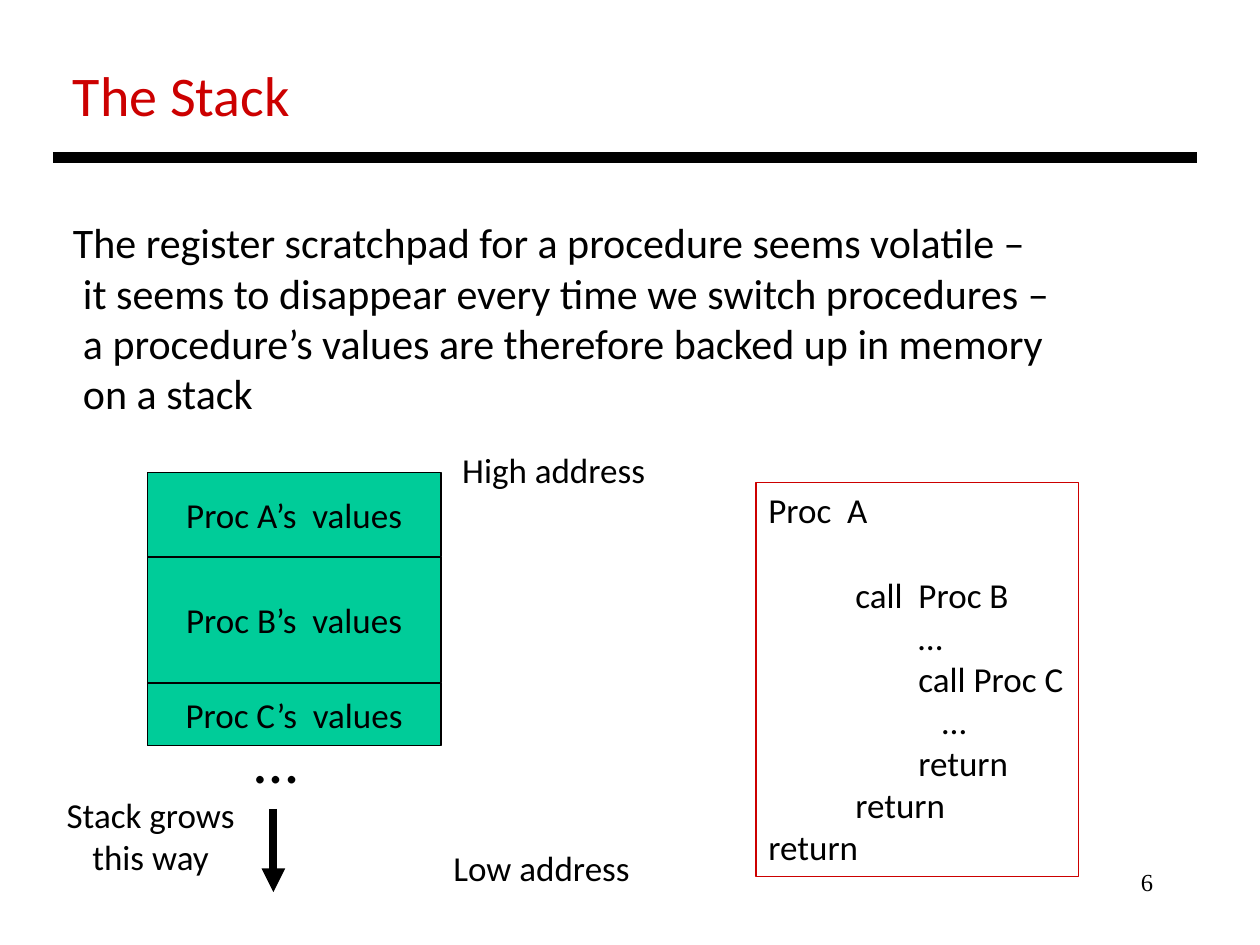
from lxml import etree
from pptx import Presentation
from pptx.dml.color import RGBColor
from pptx.enum import shapes, text
from pptx.oxml import ns
from pptx.util import Inches, Pt

BLACK, RED, GREEN = "000000", "CC0000", "00CC99"
LEFT, CENTER, RIGHT = text.PP_ALIGN.LEFT, text.PP_ALIGN.CENTER, text.PP_ALIGN.RIGHT

# Each line of text: (words, indent in inches, space before in points)
INTRO = [
    ("The register scratchpad for a procedure seems volatile –", 0.15, 0),
    ("it seems to disappear every time we switch procedures –", 0.23, 0),
    ("a procedure’s values are therefore backed up in memory", 0.23, 0),
    ("on a stack", 0.23, 0),
]
CODE = [
    ("Proc  A", 0, 0),
    ("call  Proc B", 0.69, 24.4),
    ("…", 1.19, 0),
    ("call Proc C", 1.19, 0),
    ("…", 1.38, 0),
    ("return", 1.19, 0),
    ("return", 0.69, 0),
    ("return", 0, 0),
]
# Stack frames from high to low address: (label, height)
FRAMES = [("Proc A’s  values", 0.67), ("Proc B’s  values", 1), ("Proc C’s  values", 0.5)]
STACK_LEFT, STACK_TOP, STACK_WIDTH = 1.17, 3.75, 2.33

# Text boxes: (lines, (left, top, width, height), size, colour, alignment, font)
LABELS = [
    (["6"], (7.17, 6.83, 2.08, 0.5), 14, BLACK, RIGHT, "Times New Roman"),
    (["The Stack"], (0.48, 0.43, 1.94, 0.64), 32, RED, LEFT, "Calibri"),
    (INTRO, (0.33, 1.67, 8.25, 1.72), 24, BLACK, LEFT, "Calibri"),
    (["…"], (1.92, 5.67, 0.55, 0.71), 36, BLACK, LEFT, "Calibri"),
    (["High address"], (3.57, 3.51, 1.67, 0.44), 20, BLACK, LEFT, "Calibri"),
    (["Low address"], (3.5, 6.67, 1.61, 0.44), 20, BLACK, LEFT, "Calibri"),
    (["Stack grows", "this way"], (0.42, 6.25, 1.55, 0.77), 20, BLACK, CENTER, "Calibri"),
]


def rgb(color):
    return RGBColor.from_string(color)


def write(shape, lines, size=20, color=BLACK, align=LEFT, font="Calibri",
          anchor=text.MSO_ANCHOR.TOP):
    frame = shape.text_frame
    frame.word_wrap = True
    frame.vertical_anchor = anchor
    # Free the inset on the side where the line ends, so no line breaks
    if align != RIGHT:
        frame.margin_right = 0
    if align == CENTER:
        frame.margin_left = 0
    for i, line in enumerate(lines):
        words, indent, before = (line, 0, 0) if isinstance(line, str) else line
        paragraph = frame.add_paragraph() if i else frame.paragraphs[0]
        paragraph.alignment = align
        paragraph.space_before = Pt(before)
        properties = paragraph._p.get_or_add_pPr()
        properties.set("marL", str(Inches(indent)))
        properties.set("indent", "0")
        run = paragraph.add_run()
        run.text = words
        run.font.size, run.font.name = Pt(size), font
        run.font.color.rgb = rgb(color)


def add_box(slide, box, line, fill=None):
    shape = slide.shapes.add_shape(shapes.MSO_SHAPE.RECTANGLE, *map(Inches, box))
    shape.shadow.inherit = False
    if fill:
        shape.fill.solid()
        shape.fill.fore_color.rgb = rgb(fill)
    else:
        shape.fill.background()
    shape.line.color.rgb, shape.line.width = rgb(line), Pt(0.75)
    return shape


def add_line(slide, start, end, width, arrow=False):
    line = slide.shapes.add_connector(
        shapes.MSO_CONNECTOR.STRAIGHT, *map(Inches, start + end))
    line.line.color.rgb, line.line.width = rgb(BLACK), Pt(width)
    if arrow:
        etree.SubElement(line.line._get_or_add_ln(), ns.qn("a:tailEnd"), type="triangle")
    etree.SubElement(line._element.spPr, ns.qn("a:effectLst"))


def main():
    deck = Presentation()
    deck.slide_width, deck.slide_height = Inches(10), Inches(7.5)
    slide = deck.slides.add_slide(deck.slide_layouts[6])

    # Title rule
    add_line(slide, (0.42, 1.25), (9.5, 1.25), 6)

    # Stack frames, each below the one before
    top = STACK_TOP
    for label, height in FRAMES:
        frame = add_box(slide, (STACK_LEFT, top, STACK_WIDTH, height), BLACK, GREEN)
        write(frame, [label], align=CENTER, anchor=text.MSO_ANCHOR.MIDDLE)
        top += height

    # Title, introduction, labels and page number
    for lines, box, *style in LABELS:
        write(slide.shapes.add_textbox(*map(Inches, box)), lines, *style)

    # Growth direction
    add_line(slide, (2.17, 6.42), (2.17, 7.08), 4.5, arrow=True)

    # Call sequence
    write(add_box(slide, (6, 3.83, 2.56, 3.13), RED), CODE)

    deck.save("out.pptx")


if __name__ == "__main__":
    main()
